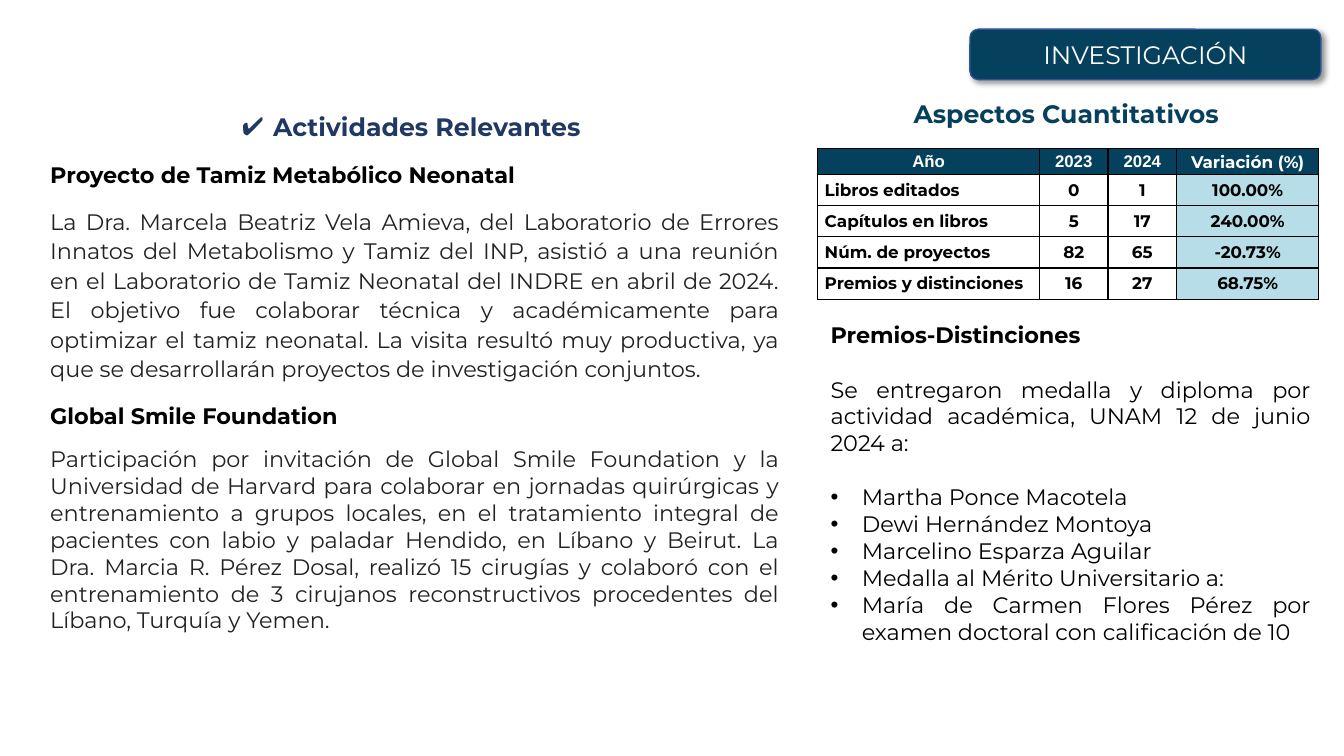
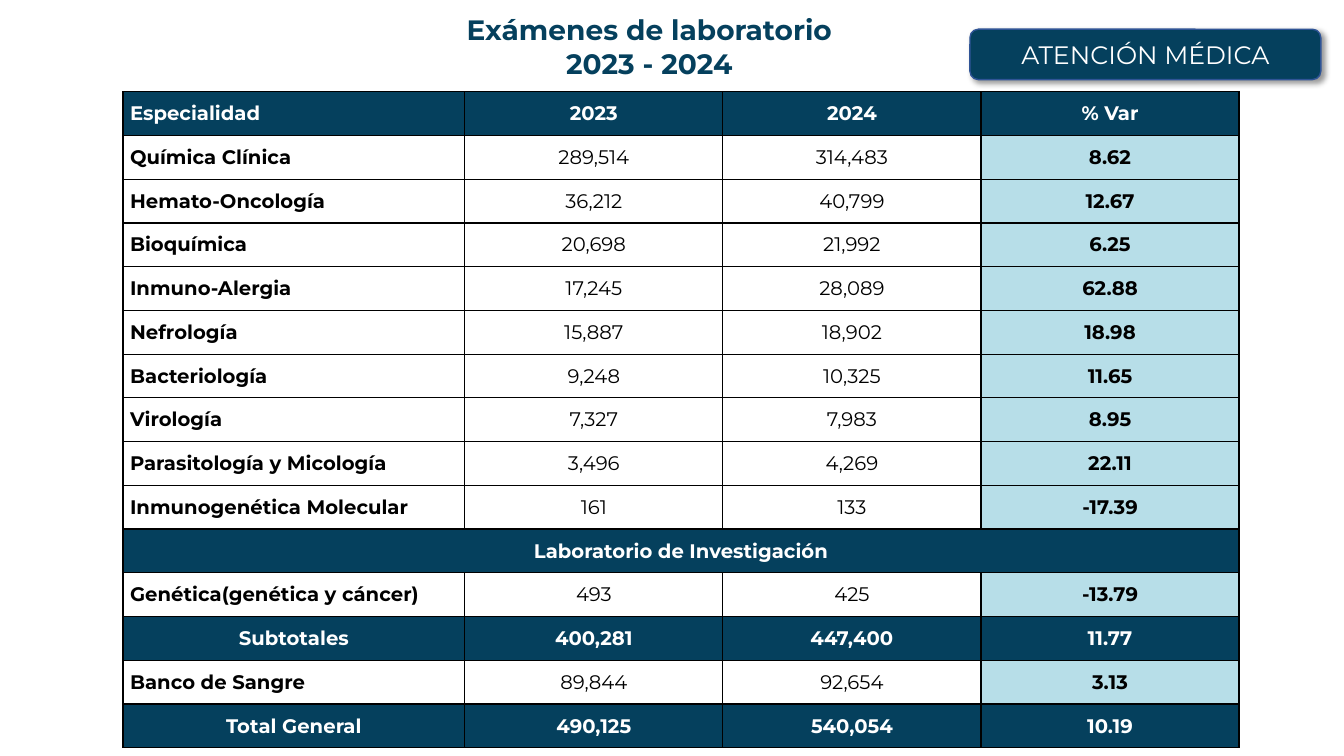
from lxml import etree
from pptx import Presentation
from pptx.dml.color import RGBColor
from pptx.enum.shapes import MSO_SHAPE
from pptx.enum.text import MSO_ANCHOR, PP_ALIGN
from pptx.oxml.ns import qn
from pptx.util import Inches, Pt

LEFT, CENTER, JUSTIFY = PP_ALIGN.LEFT, PP_ALIGN.CENTER, PP_ALIGN.JUSTIFY
TOP, MIDDLE = MSO_ANCHOR.TOP, MSO_ANCHOR.MIDDLE
ROUND = MSO_SHAPE.ROUNDED_RECTANGLE

TEAL, NAVY, EDGE, PALE = "05405D", "1F3864", "2F5496", "B7DEE8"
BLACK, GRAY, WHITE = "000000", "222222", "FFFFFF"


def rgb(code):
    return RGBColor.from_string(code)


def sub(node, tag, **attrs):
    return etree.SubElement(node, qn(tag), attrs)


class Deck:
    font = "Montserrat"
    indent = Inches(0.31)

    def __init__(self):
        self.file = Presentation()
        self.file.slide_width = Inches(13.33)
        self.file.slide_height = Inches(7.5)

    def page(self, label):
        self.slide = self.file.slides.add_slide(self.file.slide_layouts[6])
        self.badge(label)

    def style(self, para, text, size, color=BLACK, bold=False, align=LEFT,
              before=0, line=None, bullet=None, font=None):
        para.text = text
        para.alignment = align
        if before:
            para.space_before = Pt(before)
        if line:
            para.line_spacing = line
        if bullet:
            props = para._p.get_or_add_pPr()
            props.set("marL", str(self.indent))
            props.set("indent", str(-self.indent))
            sub(sub(props, "a:buClr"), "a:srgbClr", val=color)
            sub(props, "a:buFont", typeface="Arial")
            sub(props, "a:buChar", char=bullet)
        para.font.name = font or self.font
        para.font.size = Pt(size)
        para.font.bold = bold
        para.font.color.rgb = rgb(color)

    def badge(self, label):
        box = self.slide.shapes.add_shape(
            ROUND, Inches(9.62), Inches(0.29), Inches(3.48), Inches(0.5))
        box.fill.solid()
        box.fill.fore_color.rgb = rgb(TEAL)
        box.line.color.rgb = rgb(EDGE)
        box.line.width = Pt(1)
        # Soft shadow toward the lower right
        box.shadow.inherit = False
        effects = box._element.spPr.find(qn("a:effectLst"))
        shade = sub(effects, "a:outerShdw", blurRad=str(Pt(4)), dist=str(Pt(3)),
                    dir="2700000", algn="tl", rotWithShape="0")
        sub(sub(shade, "a:srgbClr", val=BLACK), "a:alpha", val="40000")
        box.text_frame.vertical_anchor = MIDDLE
        self.style(box.text_frame.paragraphs[0], label, 18, WHITE, align=CENTER)

    def text(self, left, top, width, height, items, anchor=TOP):
        """Each item is a text and a dict of paragraph style."""
        box = self.slide.shapes.add_textbox(
            Inches(left), Inches(top), Inches(width), Inches(height))
        frame = box.text_frame
        frame.word_wrap = True
        frame.vertical_anchor = anchor
        for i, (words, look) in enumerate(items):
            para = frame.add_paragraph() if i else frame.paragraphs[0]
            self.style(para, words, **look)

    def table(self, left, top, widths, heights):
        grid = self.slide.shapes.add_table(
            len(heights), len(widths), Inches(left), Inches(top),
            Inches(sum(widths)), Inches(sum(heights))).table
        for col, width in zip(grid.columns, widths):
            col.width = Inches(width)
        for row, height in zip(grid.rows, heights):
            row.height = Inches(height)
        return grid

    def cell(self, cell, text, fill=None, pad=0, **look):
        cell.margin_left = cell.margin_right = Inches(0.07)
        cell.margin_top = cell.margin_bottom = Inches(pad)
        cell.vertical_anchor = MIDDLE
        props = cell._tc.get_or_add_tcPr()
        for side in ("a:lnL", "a:lnR", "a:lnT", "a:lnB"):
            edge = sub(props, side, w=str(Pt(1)))
            sub(sub(edge, "a:solidFill"), "a:srgbClr", val=BLACK)
        if fill:
            cell.fill.solid()
            cell.fill.fore_color.rgb = rgb(fill)
        else:
            cell.fill.background()
        self.style(cell.text_frame.paragraphs[0], text, **look)


def research(deck):
    deck.page("INVESTIGACIÓN")

    # Activities on the left
    head = dict(size=16, bold=True, align=JUSTIFY, before=12, line=1.1)
    body = dict(size=16, color=GRAY, align=JUSTIFY, before=12)
    deck.text(0.4, 1.03, 7.43, 5.36, [
        ("Actividades Relevantes ", dict(size=18, color=NAVY, bold=True,
                                         align=CENTER, line=1.1, bullet="✔")),
        ("Proyecto de Tamiz Metabólico Neonatal", head),
        ("La Dra. Marcela Beatriz Vela Amieva, del Laboratorio de Errores "
         "Innatos del Metabolismo y Tamiz del INP, asistió a una reunión en el "
         "Laboratorio de Tamiz Neonatal del INDRE en abril de 2024. El objetivo "
         "fue colaborar técnica y académicamente para optimizar el tamiz "
         "neonatal. La visita resultó muy productiva, ya que se desarrollarán "
         "proyectos de investigación conjuntos.", dict(body, line=1.1)),
        ("Global Smile Foundation", head),
        ("Participación por invitación de Global Smile Foundation y la "
         "Universidad de Harvard para colaborar en jornadas quirúrgicas y "
         "entrenamiento a grupos locales, en el tratamiento integral de "
         "pacientes con labio y paladar Hendido, en Líbano y Beirut. La Dra. "
         "Marcia R. Pérez Dosal, realizó 15 cirugías y colaboró con el "
         "entrenamiento de 3 cirujanos reconstructivos procedentes del Líbano, "
         "Turquía y Yemen.", body),
    ])

    # Figures on the right
    deck.text(8.13, 0.93, 4.96, 0.4, [
        ("Aspectos Cuantitativos ",
         dict(size=18, color=TEAL, bold=True, align=CENTER))])
    rows = [
        ("Año", "2023", "2024", "Variación (%)"),
        ("Libros editados", "0", "1", "100.00%"),
        ("Capítulos en libros", "5", "17", "240.00%"),
        ("Núm. de proyectos", "82", "65", "-20.73%"),
        ("Premios y distinciones", "16", "27", "68.75%"),
    ]
    grid = deck.table(8.11, 1.47, [2.2, 0.68, 0.68, 1.41], [0.26] + [0.31] * 4)
    for r, row in enumerate(rows):
        for c, words in enumerate(row):
            look = dict(size=12, bold=True, align=CENTER if c else LEFT)
            if r == 0:
                look.update(fill=TEAL, color=WHITE, align=CENTER, line=1.07,
                            font="Arial" if c < 3 else None)
            elif c == 3:
                look.update(fill=PALE)
            deck.cell(grid.cell(r, c), words, **look)

    # Awards below the table, set apart by one line each
    plain = dict(size=16, align=JUSTIFY)
    gap = dict(plain, before=19.5)
    names = [
        "Martha Ponce Macotela",
        "Dewi Hernández Montoya",
        "Marcelino Esparza Aguilar",
        "Medalla al Mérito Universitario a:",
        "María de Carmen Flores Pérez por examen doctoral con calificación de 10",
    ]
    deck.text(8.14, 3.14, 4.96, 3.6, [
        ("Premios-Distinciones", dict(plain, bold=True)),
        ("Se entregaron medalla y diploma por actividad académica, UNAM 12 de "
         "junio 2024 a:", gap),
    ] + [(name, dict(plain if i else gap, bullet="•"))
         for i, name in enumerate(names)])


def care(deck):
    deck.page("ATENCIÓN MÉDICA")
    title = dict(size=20, color=TEAL, bold=True, align=CENTER)
    deck.text(3.3, 0.09, 6.36, 0.74, [
        ("Exámenes de laboratorio ", title), ("2023 - 2024 ", title)], MIDDLE)

    # Laboratory tests by specialty
    rows = [
        ("Especialidad", "2023", "2024", "% Var"),
        ("Química Clínica", "289,514", "314,483", "8.62"),
        ("Hemato-Oncología", "36,212", "40,799", "12.67"),
        ("Bioquímica", "20,698", "21,992", "6.25"),
        ("Inmuno-Alergia", "17,245", "28,089", "62.88"),
        ("Nefrología", "15,887", "18,902", "18.98"),
        ("Bacteriología", "9,248", "10,325", "11.65"),
        ("Virología", "7,327", "7,983", "8.95"),
        ("Parasitología y Micología", "3,496", "4,269", "22.11"),
        ("Inmunogenética Molecular", "161", "133", "-17.39"),
        ("Laboratorio de Investigación", "", "", ""),
        ("Genética(genética y cáncer)", "493", "425", "-13.79"),
        ("Subtotales", "400,281", "447,400", "11.77"),
        ("Banco de Sangre", "89,844", "92,654", "3.13"),
        ("Total General", "490,125", "540,054", "10.19"),
    ]
    section = 10
    bands = (0, section, 12, 14)
    grid = deck.table(1.22, 0.91, [3.39] + [2.56] * 3, [0.43] * len(rows))
    for r, row in enumerate(rows):
        for c, words in enumerate(row):
            look = dict(size=14, pad=0.1, bold=c in (0, 3),
                        align=CENTER if c else LEFT)
            if r in bands:
                look.update(fill=TEAL, color=WHITE, bold=True,
                            align=CENTER if r or c else LEFT)
            elif c == 3:
                look.update(fill=PALE)
            deck.cell(grid.cell(r, c), words, **look)
    grid.cell(section, 0).merge(grid.cell(section, 3))


def main():
    deck = Deck()
    research(deck)
    care(deck)
    deck.file.save("out.pptx")


if __name__ == "__main__":
    main()
